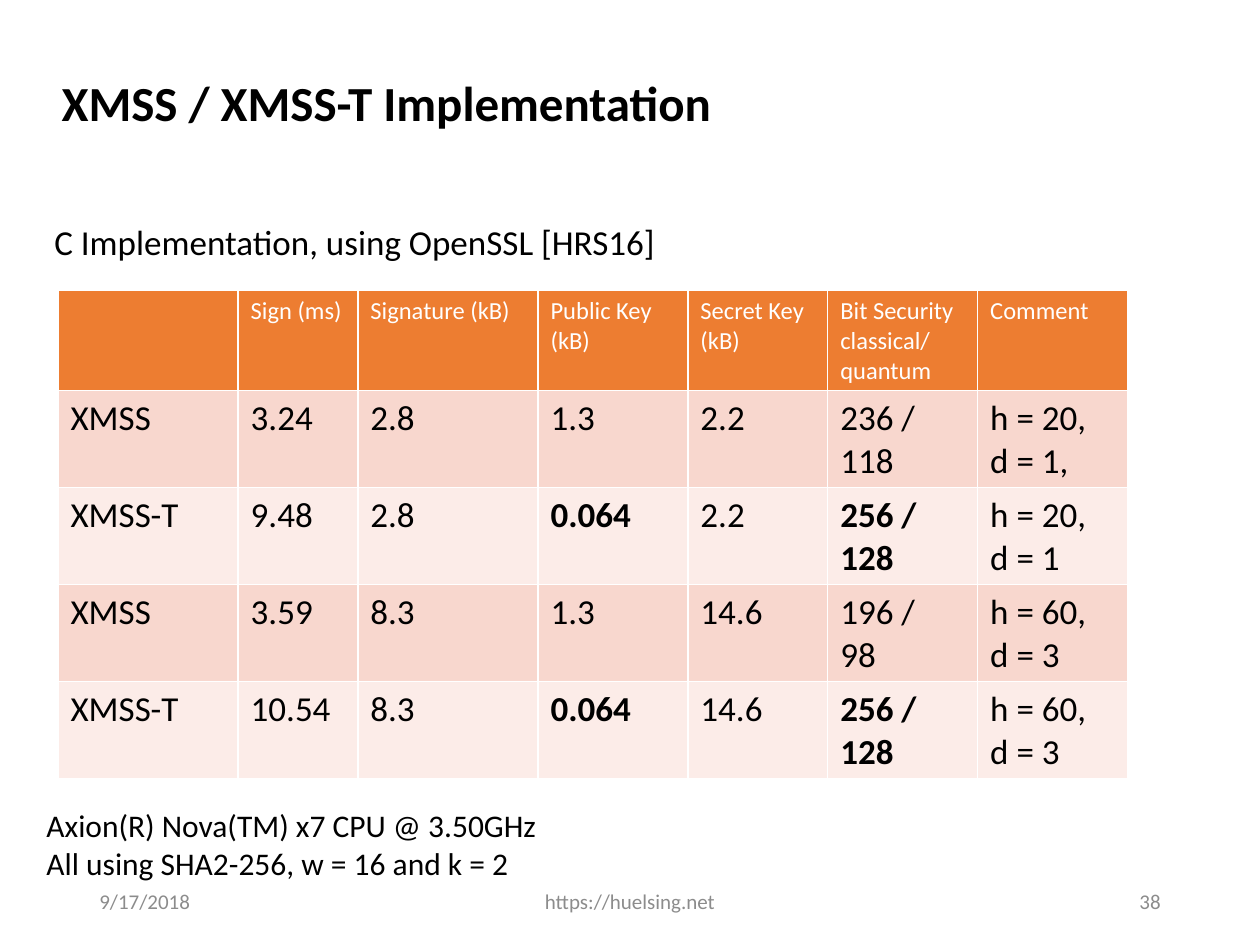
from pptx import Presentation
from pptx import util as u
from pptx.dml.color import RGBColor
from pptx.enum import text

COLORS = {"ink": "000000", "muted": "8C8C8C", "header": "ED7D31",
          "header_ink": "FFFFFF", "odd": "F8D7CE", "even": "FCECE8"}
WIDTH, HEIGHT = 10, 7.5
LEFT, CENTER, RIGHT = text.PP_ALIGN.LEFT, text.PP_ALIGN.CENTER, text.PP_ALIGN.RIGHT
TOP, MIDDLE = text.MSO_ANCHOR.TOP, text.MSO_ANCHOR.MIDDLE

BODY = {"size": 20, "bold": False, "color": "ink"}
STRONG = {**BODY, "bold": True}
TITLE = {**STRONG, "size": 28}
NOTE = {**BODY, "size": 18}
FOOTER = {**BODY, "size": 12, "color": "muted"}
HEADING = {**BODY, "size": 14, "color": "header_ink"}

PASSAGES = [
    ("XMSS / XMSS-T Implementation", (0.39, 0.53, 7.29, 0.92), TITLE, LEFT, TOP),
    (" C Implementation, using OpenSSL [HRS16]", (0.27, 1.7, 9.45, 0.44), BODY, LEFT, TOP),
    ("Axion(R) Nova(TM) x7 CPU @ 3.50GHz\nAll using SHA2-256, w = 16 and k = 2",
     (0.27, 6.35, 9.45, 0.71), NOTE, LEFT, TOP),
]
FOOTERS = [("9/17/2018", 2.25, LEFT), ("https://huelsing.net", 3.38, CENTER), ("38", 2.25, RIGHT)]
FOOTER_MARGIN, FOOTER_TOP, FOOTER_HEIGHT = 0.69, 6.95, 0.4

HEADINGS = ["", "Sign (ms)", "Signature (kB)", "Public Key (kB)", "Secret Key (kB)",
            "Bit Security\nclassical/\nquantum", "Comment"]
SCHEMES = [
    ["XMSS", "3.24", "2.8", "1.3", "2.2", "236 /\n118", "h = 20,\nd = 1,"],
    ["XMSS-T", "9.48", "2.8", "0.064", "2.2", "256 /\n128", "h = 20,\nd = 1"],
    ["XMSS", "3.59", "8.3", "1.3", "14.6", "196 /\n98", "h = 60,\nd = 3"],
    ["XMSS-T", "10.54", "8.3", "0.064", "14.6", "256 /\n128", "h = 60,\nd = 3"],
]
BEST = {"0.064", "256 /\n128"}
COLUMNS = [1.43, 0.95, 1.43, 1.19, 1.11, 1.19, 1.19]
ROWS = [0.79] + [0.77] * len(SCHEMES)
TABLE_LEFT, TABLE_TOP = 0.46, 2.3


def rgb(name):
    return RGBColor.from_string(COLORS[name])


def write(frame, words, style, align=LEFT):
    frame.text = words
    settings = {"name": "Calibri", "size": u.Pt(style["size"]), "bold": style["bold"]}
    for line in frame.paragraphs:
        line.alignment = align
        for run in line.runs:
            for key, value in settings.items():
                setattr(run.font, key, value)
            run.font.color.rgb = rgb(style["color"])


def add_passage(slide, words, place, style, align, anchor):
    frame = slide.shapes.add_textbox(*map(u.Inches, place)).text_frame
    frame.word_wrap = True
    frame.vertical_anchor = anchor
    write(frame, words, style, align)


def add_footers(slide):
    gap = (WIDTH - 2 * FOOTER_MARGIN - sum(width for _, width, _ in FOOTERS)) / (len(FOOTERS) - 1)
    left = FOOTER_MARGIN
    for words, width, align in FOOTERS:
        add_passage(slide, words, (left, FOOTER_TOP, width, FOOTER_HEIGHT), FOOTER, align, MIDDLE)
        left += width + gap


def add_benchmarks(slide):
    place = map(u.Inches, (TABLE_LEFT, TABLE_TOP, sum(COLUMNS), sum(ROWS)))
    benchmarks = slide.shapes.add_table(len(ROWS), len(COLUMNS), *place).table
    for column, width in zip(benchmarks.columns, COLUMNS):
        column.width = u.Inches(width)
    for r, (row, height, entries) in enumerate(zip(benchmarks.rows, ROWS, [HEADINGS] + SCHEMES)):
        row.height = u.Inches(height)
        band = "header" if r == 0 else "odd" if r % 2 else "even"
        for cell, entry in zip(row.cells, entries):
            cell.fill.solid()
            cell.fill.fore_color.rgb = rgb(band)
            style = HEADING if r == 0 else STRONG if entry in BEST else BODY
            write(cell.text_frame, entry, style)


def main():
    deck = Presentation()
    deck.slide_width, deck.slide_height = u.Inches(WIDTH), u.Inches(HEIGHT)
    slide = deck.slides.add_slide(deck.slide_layouts[6])
    for passage in PASSAGES:
        add_passage(slide, *passage)
    add_benchmarks(slide)
    add_footers(slide)
    deck.save("out.pptx")


if __name__ == "__main__":
    main()
